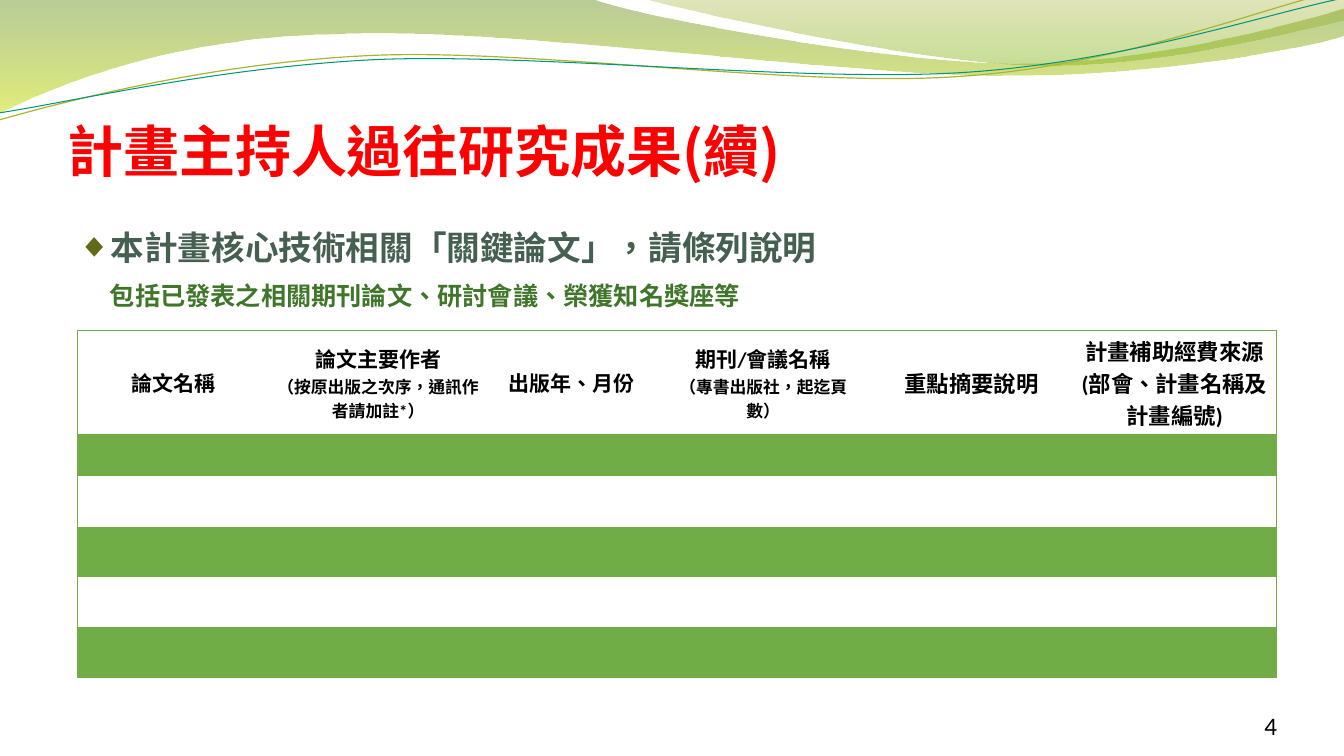
"""Builds the slide on the principal investigator's key papers."""
from dataclasses import dataclass

from lxml import etree
from pptx import Presentation
from pptx import util as u
from pptx.dml.color import RGBColor
from pptx.enum import text
from pptx.oxml import ns


@dataclass(frozen=True)
class Theme:
    cjk: str = "Noto Sans CJK TC"
    latin: str = "Calibri"
    title: str = "FF0000"
    topic: str = "455F51"
    detail: str = "3F762A"
    ink: str = "000000"
    bullet: str = "626A19"
    band: str = "70AD47"
    title_size: int = 40
    topic_size: int = 24
    detail_size: int = 18
    head_size: int = 15
    wide_head_size: int = 16
    note_size: int = 12
    number_size: int = 18


def place(x, y, width, height):
    """Turn percentages of the slide into left, top, width and height."""
    return [int(share * side / 100) for share, side in
            zip((x, y, width, height), (deck.slide_width, deck.slide_height) * 2)]


def write(paragraph, words, size, color, face, bold=True, align=text.PP_ALIGN.LEFT):
    """Fill one paragraph and format it as a whole."""
    paragraph.text = words
    paragraph.runs[0].font._element.set("lang", "zh-TW")
    paragraph.alignment = align
    paragraph.space_before = u.Pt(0)
    font = paragraph.font
    font.size, font.bold, font.name = u.Pt(size), bold, face
    font.color.rgb = RGBColor.from_string(color)
    east_asian = etree.SubElement(font._element, ns.qn("a:ea"))
    east_asian.set("typeface", theme.cjk)


theme = Theme()
deck = Presentation()
deck.slide_width, deck.slide_height = u.Inches(13.33), u.Inches(7.5)
slide = deck.slides.add_slide(deck.slide_layouts[1])
title, topic = slide.placeholders

# Each wave: points (a pair is a line, six numbers a curve), gradient stops, line
waves = [
    ([(0, 0), (5.87, -0.01), (6.34, 0.17, 8.84, 0.63, 10.11, 0.63),
      (11.37, 0.63, 12.77, 0.26, 13.33, 0.09), (13.34, 0.36),
      (13.11, 0.44, 11.59, 0.76, 9.94, 0.75), (8.29, 0.75, 5.09, 0.28, 3.43, 0.34),
      (1.72, 0.36, 0.61, 0.83, -0.02, 1.13)],
     [("668F1B", 45), ("CAE00E", 55)], None),
    ([(6.38, -0.01), (6.79, 0.11, 9.09, 0.62, 10.25, 0.65),
      (11.4, 0.69, 12.82, 0.32, 13.33, 0.21), (13.33, 0)],
     [("99A719", 30), ("80B814", 45)], None),
    ([(-0.01, 1.19), (0.63, 1.01, 2.1, 0.62, 3.69, 0.55),
      (5.27, 0.48, 7.89, 0.87, 9.49, 0.76), (11.1, 0.66, 12.51, 0.08, 13.3, -0.1)],
     None, ("A8B532", 0.85)),
    ([(-0.01, 1.12), (0.62, 1.03, 2.18, 0.66, 3.77, 0.59),
      (5.37, 0.53, 7.96, 0.82, 9.55, 0.72), (11.14, 0.62, 12.55, 0.14, 13.33, -0.02)],
     None, ("029676", 0.75)),
]
for (start, *parts), stops, stroke in waves:
    points = [(100 * x, 100 * y) for part in parts for x, y in zip(part[::2], part[1::2])]
    builder = slide.shapes.build_freeform(100 * start[0], 100 * start[1], scale=u.Inches(0.01))
    builder.add_line_segments(points, close=stops is not None)
    wave = builder.convert_to_shape()
    segments = iter(list(wave._element.iter(ns.qn("a:lnTo"))))
    for part in parts:
        pieces = [next(segments) for _ in part[::2]]
        if len(pieces) == 3:
            curve = etree.Element(ns.qn("a:cubicBezTo"))
            pieces[0].addprevious(curve)
            for piece in pieces:
                curve.append(piece[0])
                piece.getparent().remove(piece)
    wave.shadow.inherit = False
    if stops:
        wave.line.fill.background()
        wave.fill.gradient()
        wave.fill.gradient_angle = 270
        for stop, (color, _) in zip(wave.fill.gradient_stops, stops):
            stop.color.rgb = RGBColor.from_string(color)
        for tint, (_, opacity) in zip(wave._element.iter(ns.qn("a:srgbClr")), stops):
            etree.SubElement(tint, ns.qn("a:alpha")).set("val", str(opacity * 1000))
    else:
        wave.fill.background()
        wave.line.color.rgb = RGBColor.from_string(stroke[0])
        wave.line.width = u.Pt(stroke[1])

for holder, box in ((title, (5, 7.6, 90, 16.67)), (topic, (5, 26.67, 91.75, 10))):
    slide.shapes._spTree.append(holder._element)
    holder.left, holder.top, holder.width, holder.height = place(*box)
    holder.text_frame.auto_size = text.MSO_AUTO_SIZE.NONE
    holder.text_frame.word_wrap = True

heading = title.text_frame
heading.margin_left = heading.margin_right = heading.margin_bottom = 0
heading.vertical_anchor = text.MSO_ANCHOR.BOTTOM
write(heading.paragraphs[0], "計畫主持人過往研究成果(續)",
      theme.title_size, theme.title, theme.cjk)

topic.text_frame.vertical_anchor = text.MSO_ANCHOR.TOP
topic_line = topic.text_frame.paragraphs[0]
topic_line.line_spacing = 1.5
topic_line.space_before = u.Pt(0)
indents = topic_line._p.get_or_add_pPr()
indents.set("marL", str(u.Inches(0.3)))
indents.set("indent", str(u.Inches(-0.3)))
bullet_color = etree.SubElement(indents, ns.qn("a:buClr"))
etree.SubElement(bullet_color, ns.qn("a:srgbClr")).set("val", theme.bullet)
etree.SubElement(indents, ns.qn("a:buChar")).set("char", "◆")
write(topic_line, "本計畫核心技術相關「關鍵論文」，請條列說明",
      theme.topic_size, theme.topic, theme.cjk)

heads = [
    (1.9, [("論文名稱", theme.head_size)]),
    (2.16, [("論文主要作者", theme.head_size),
            ("（按原出版之次序，通訊作者請加註*）", theme.note_size)]),
    (1.68, [("出版年、月份", theme.head_size)]),
    (2.12, [("期刊/會議名稱", theme.head_size),
            ("（專書出版社，起迄頁數）", theme.note_size)]),
    (2.01, [("重點摘要說明", theme.wide_head_size)]),
    (2.02, [("計畫補助經費來源", theme.wide_head_size),
            ("(部會、計畫名稱及計畫編號)", theme.wide_head_size)]),
]
row_heights = [1.01, 0.41] + [0.5] * 4
last_row, last_column = len(row_heights) - 1, len(heads) - 1
frame = slide.shapes.add_table(len(row_heights), len(heads), *place(5.78, 43.73, 89.2, 45.73))
papers = frame.table
papers.first_row = papers.horz_banding = False
papers._tbl.tblPr.find(ns.qn("a:tableStyleId")).text = "{2D5ABB26-0587-4C30-8999-92F81FD0307C}"
for row, height in zip(papers.rows, row_heights):
    row.height = u.Inches(height)
for c, (width, lines) in enumerate(heads):
    papers.columns[c].width = u.Inches(width)
    for r in range(len(row_heights)):
        cell = papers.cell(r, c)
        cell.vertical_anchor = text.MSO_ANCHOR.MIDDLE
        cell.margin_left = cell.margin_right = u.Pt(5.4)
        cell.margin_top = cell.margin_bottom = u.Pt(2.7)
        edges = {"lnL": c == 0, "lnR": c == last_column, "lnT": r == 0,
                 "lnB": 2 if r == 0 else r == last_row}
        for edge, weight in edges.items():
            if weight:
                border = etree.SubElement(cell._tc.tcPr, ns.qn(f"a:{edge}"))
                border.set("w", str(u.Pt(int(weight))))
                paint = etree.SubElement(border, ns.qn("a:solidFill"))
                etree.SubElement(paint, ns.qn("a:srgbClr")).set("val", theme.band)
        if r % 2:
            cell.fill.solid()
            cell.fill.fore_color.rgb = RGBColor.from_string(theme.band)
        else:
            cell.fill.background()
    head = papers.cell(0, c).text_frame
    for i, (words, size) in enumerate(lines):
        write(head.add_paragraph() if i else head.paragraphs[0], words, size,
              theme.ink, theme.latin, align=text.PP_ALIGN.CENTER)

number = slide.shapes.add_textbox(*place(86.72, 92.67, 8.3, 5.33)).text_frame
number.word_wrap = True
number.margin_left = number.margin_right = number.margin_top = number.margin_bottom = 0
number.vertical_anchor = text.MSO_ANCHOR.BOTTOM
write(number.paragraphs[0], "4", theme.number_size, theme.ink, theme.latin,
      bold=False, align=text.PP_ALIGN.RIGHT)

detail = slide.shapes.add_textbox(*place(7.43, 34.4, 86.87, 7.47)).text_frame
detail.word_wrap = True
detail.auto_size = text.MSO_AUTO_SIZE.SHAPE_TO_FIT_TEXT
detail.paragraphs[0].line_spacing = 1.5
write(detail.paragraphs[0], "包括已發表之相關期刊論文、研討會議、榮獲知名獎座等",
      theme.detail_size, theme.detail, theme.cjk)

deck.save("out.pptx")
